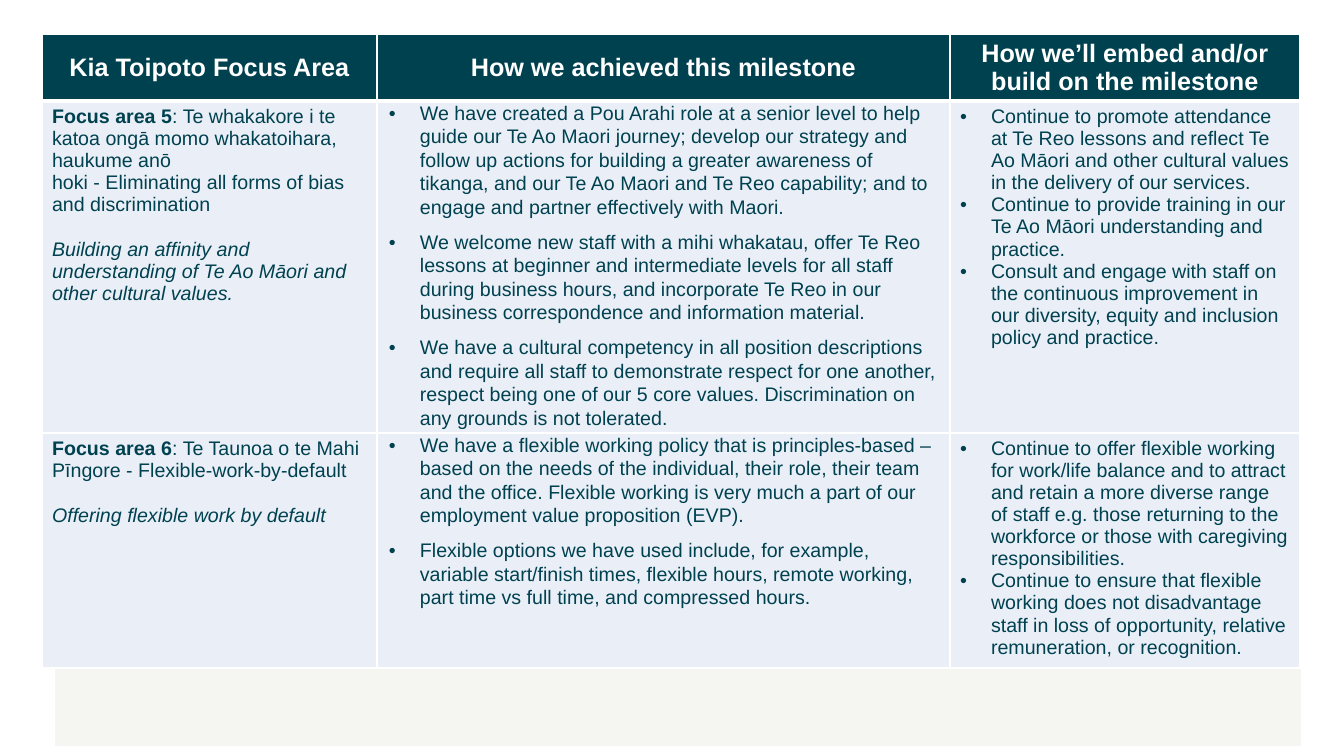
"""Build the Kia Toipoto milestone table slide."""
from lxml.etree import SubElement
from pptx import Presentation
from pptx.dml.color import RGBColor
from pptx.enum.shapes import MSO_SHAPE as Shape
from pptx.enum.text import MSO_ANCHOR as Anchor, PP_ALIGN as Align
from pptx.oxml.ns import qn
from pptx.util import Pt

EMU_PER_PX = 914400 / 100.8
FONT = "Arial"
TEAL, PALE, WHITE, BAND = "004150", "EAEFF7", "FFFFFF", "F5F5F2"
COLUMNS = [335, 573, 350]
ROWS = [67, 332, 235]

HEADINGS = [
    "Kia Toipoto Focus Area",
    "How we achieved this milestone",
    "How we’ll embed and/or build on the milestone",
]

FOCUS_AREAS = [
    {
        "name": "Focus area 5",
        "title": [
            ": Te whakakore i te katoa ongā momo whakatoihara, haukume anō",
            "hoki - Eliminating all forms of bias and discrimination",
        ],
        "aim": "Building an affinity and understanding of Te Ao Māori and other "
               "cultural values.",
        "achieved": [
            "We have created a Pou Arahi role at a senior level to help guide our "
            "Te Ao Maori journey; develop our strategy and follow up actions for "
            "building a greater awareness of tikanga, and our Te Ao Maori and "
            "Te Reo capability; and to engage and partner effectively with Maori.",
            "We welcome new staff with a mihi whakatau, offer Te Reo lessons at "
            "beginner and intermediate levels for all staff during business hours, "
            "and incorporate Te Reo in our business correspondence and information "
            "material.",
            "We have a cultural competency in all position descriptions and require "
            "all staff to demonstrate respect for one another, respect being one of "
            "our 5 core values. Discrimination on any grounds is not tolerated.",
        ],
        "next": [
            "Continue to promote attendance at Te Reo lessons and reflect Te Ao "
            "Māori and other cultural values in the delivery of our services.",
            "Continue to provide training in our Te Ao Māori understanding and "
            "practice.",
            "Consult and engage with staff on the continuous improvement in our "
            "diversity, equity and inclusion policy and practice.",
        ],
    },
    {
        "name": "Focus area 6",
        "title": [": Te Taunoa o te Mahi Pīngore - Flexible-work-by-default"],
        "aim": "Offering flexible work by default",
        "achieved": [
            "We have a flexible working policy that is principles-based – based on "
            "the needs of the individual, their role, their team and the office. "
            "Flexible working is very much a part of our employment value "
            "proposition (EVP).",
            "Flexible options we have used include, for example, variable "
            "start/finish times, flexible hours, remote working, part time vs full "
            "time, and compressed hours.",
        ],
        "next": [
            "Continue to offer flexible working for work/life balance and to attract "
            "and retain a more diverse range of staff e.g. those returning to the "
            "workforce or those with caregiving responsibilities.",
            "Continue to ensure that flexible working does not disadvantage staff in "
            "loss of opportunity, relative remuneration, or recognition.",
        ],
    },
]


def px(length):
    """Turn pixels into EMU."""
    return round(length * EMU_PER_PX)


def color(value):
    """Turn a hex string into a colour."""
    return RGBColor.from_string(value)


def add_run(paragraph, text, size=14, ink=TEAL, bold=False, italic=False):
    """Add one formatted run to a paragraph."""
    run = paragraph.add_run()
    run.text = text
    font = run.font
    font.name, font.size, font.bold, font.italic = FONT, Pt(size), bold, italic
    font.color.rgb = color(ink)


def add_bullet(paragraph):
    """Give a paragraph a round bullet with a hanging indent."""
    properties = paragraph._p.get_or_add_pPr()
    properties.set("marL", str(px(31)))
    properties.set("indent", str(-px(31)))
    SubElement(properties, qn("a:buFont"), typeface=FONT)
    SubElement(properties, qn("a:buChar"), char="•")


def style_cell(cell, fill, top=1, bottom=1):
    """Give a cell white borders and a solid fill."""
    properties = cell._tc.get_or_add_tcPr()
    for side, width in zip("LRTB", (1, 1, top, bottom)):
        line = SubElement(properties, qn(f"a:ln{side}"), w=str(Pt(width)))
        solid = SubElement(line, qn("a:solidFill"))
        SubElement(solid, qn("a:srgbClr"), val=WHITE)
    cell.fill.solid()
    cell.fill.fore_color.rgb = color(fill)


def next_paragraph(frame, index):
    """Return the first paragraph of a frame, or a new one after it."""
    return frame.add_paragraph() if index else frame.paragraphs[0]


def fill_heading(cell, text):
    """Write a centred column heading."""
    cell.vertical_anchor = Anchor.MIDDLE
    paragraph = cell.text_frame.paragraphs[0]
    paragraph.alignment = Align.CENTER
    add_run(paragraph, text, size=18, ink=WHITE, bold=True)


def fill_focus(cell, area):
    """Write the name, title and aim of a focus area."""
    frame = cell.text_frame
    for index, text in enumerate(area["title"]):
        paragraph = next_paragraph(frame, index)
        if index == 0:
            add_run(paragraph, area["name"], bold=True)
        add_run(paragraph, text)
    paragraph = frame.add_paragraph()
    paragraph.space_before = Pt(16)
    add_run(paragraph, area["aim"], italic=True)


def fill_bullets(cell, items, spaced=False):
    """Write a bulleted list, spaced out or tight."""
    if spaced:
        cell.margin_left = cell.margin_right = px(12)
        cell.margin_top = cell.margin_bottom = 0
    for index, text in enumerate(items):
        paragraph = next_paragraph(cell.text_frame, index)
        add_bullet(paragraph)
        if spaced:
            paragraph.line_spacing = 1.07
            paragraph.space_after = Pt(8)
        add_run(paragraph, text)


def add_band(slide):
    """Draw the pale band at the foot of the slide."""
    shape = slide.shapes.add_shape(Shape.RECTANGLE, px(55), px(631), px(1246), px(115))
    shape.shadow.inherit = False
    shape.fill.solid()
    shape.fill.fore_color.rgb = color(BAND)
    shape.line.fill.background()


def add_milestones(slide):
    """Add the table of focus areas and milestones."""
    table = slide.shapes.add_table(len(ROWS), len(COLUMNS), px(42), px(34),
                                   px(sum(COLUMNS)), px(sum(ROWS))).table
    for column, width in zip(table.columns, COLUMNS):
        column.width = px(width)
    for row, height in zip(table.rows, ROWS):
        row.height = px(height)
    for cell, heading in zip(table.rows[0].cells, HEADINGS):
        style_cell(cell, TEAL, bottom=3)
        fill_heading(cell, heading)
    for index, area in enumerate(FOCUS_AREAS, start=1):
        focus, achieved, embed = cells = list(table.rows[index].cells)
        for cell in cells:
            style_cell(cell, PALE, top=3 if index == 1 else 1)
        fill_focus(focus, area)
        fill_bullets(achieved, area["achieved"], spaced=True)
        fill_bullets(embed, area["next"])


def main():
    """Build and save the slide."""
    presentation = Presentation()
    presentation.slide_width, presentation.slide_height = px(1344), px(756)
    slide = presentation.slides.add_slide(presentation.slide_layouts[6])
    add_band(slide)
    add_milestones(slide)
    presentation.save("out.pptx")


if __name__ == "__main__":
    main()
